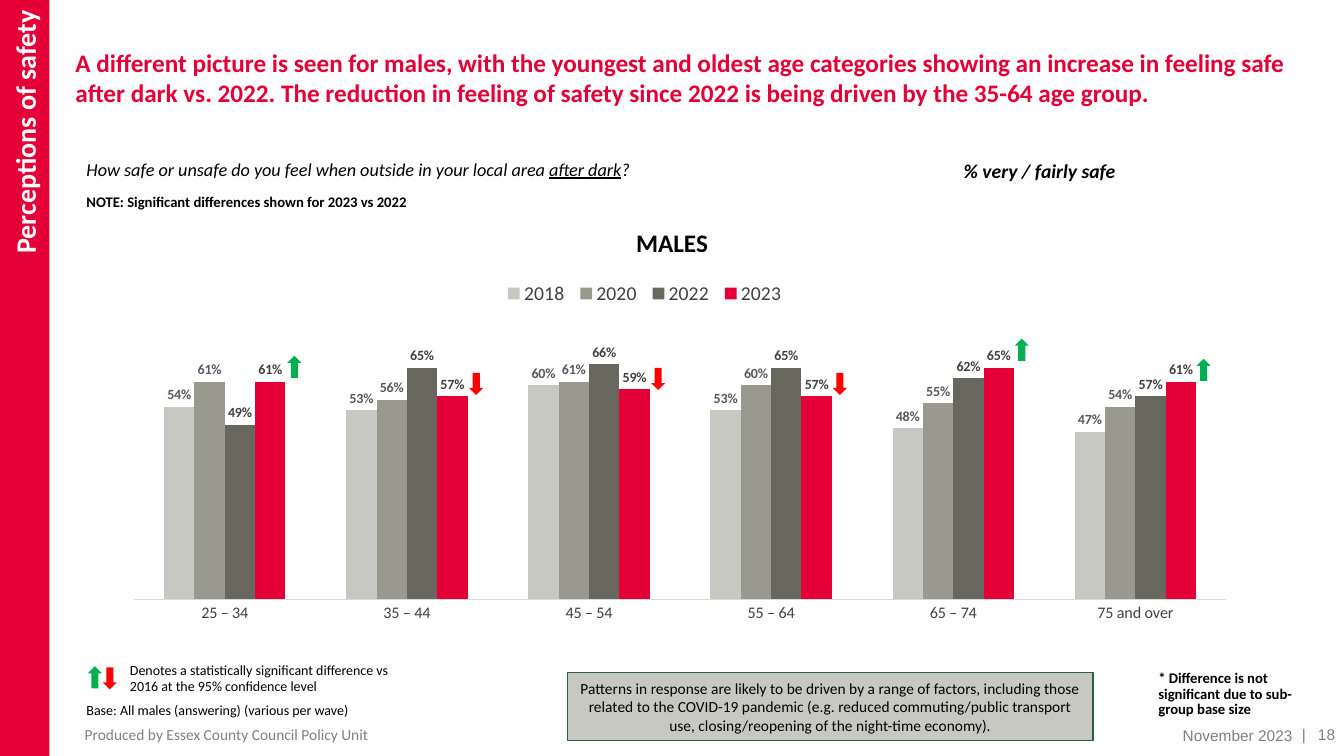
from lxml import etree
from pptx import Presentation
from pptx.chart.data import CategoryChartData
from pptx.dml.color import RGBColor
from pptx.enum.chart import XL_CHART_TYPE, XL_LABEL_POSITION, XL_LEGEND_POSITION, XL_TICK_MARK
from pptx.enum.shapes import MSO_SHAPE
from pptx.enum.text import MSO_ANCHOR, PP_ALIGN
from pptx.oxml.ns import qn
from pptx.util import Inches, Pt

CLUSTERED = XL_CHART_TYPE.COLUMN_CLUSTERED
OUTSIDE_END = XL_LABEL_POSITION.OUTSIDE_END
LEGEND_BOTTOM = XL_LEGEND_POSITION.BOTTOM
NO_TICKS = XL_TICK_MARK.NONE
RECTANGLE, UP, DOWN = MSO_SHAPE.RECTANGLE, MSO_SHAPE.UP_ARROW, MSO_SHAPE.DOWN_ARROW
TOP, MIDDLE = MSO_ANCHOR.TOP, MSO_ANCHOR.MIDDLE
LEFT, CENTER, RIGHT = PP_ALIGN.LEFT, PP_ALIGN.CENTER, PP_ALIGN.RIGHT

SLIDE_WIDTH, SLIDE_HEIGHT = Inches(13.33), Inches(7.5)
COLORS = {
    "red": "E40037", "black": "000000", "white": "FFFFFF", "footer": "808080",
    "callout": "C8C8C3", "callout_line": "2B5C4A", "rise": "00B050", "fall": "FF0000",
    "label_light": "595959", "label_dark": "404040", "axis": "D9D9D9",
    "2018": "C8C8C3", "2020": "99998F", "2022": "67675E", "2023": "E40037",
}
AGE_GROUPS = ["25 – 34", "35 – 44", "45 – 54", "55 – 64", "65 – 74", "75 and over"]
SAFE_SHARES = {
    "2018": (0.54, 0.53, 0.60, 0.53, 0.48, 0.47),
    "2020": (0.61, 0.56, 0.61, 0.60, 0.55, 0.54),
    "2022": (0.49, 0.65, 0.66, 0.65, 0.62, 0.57),
    "2023": (0.61, 0.57, 0.59, 0.57, 0.65, 0.61),
}
LABEL_COLORS = {"2018": "label_light", "2020": "label_light",
                "2022": "label_dark", "2023": "label_dark"}
# Direction and top of the significance arrow of each age group
CHANGES = [(UP, 47.07), (DOWN, 49.33), (DOWN, 48.67), (DOWN, 49.33), (UP, 44.8), (UP, 47.47)]
FIRST_CHANGE_LEFT, AGE_GROUP_STEP = 21.38, 13.53
ARROW_SIZE = (1.05, 2.93)


def rgb(name):
    return RGBColor.from_string(COLORS[name])


def place(left, top, width, height):
    """Turn percentages of the slide's size into lengths."""
    return (int(SLIDE_WIDTH * left / 100), int(SLIDE_HEIGHT * top / 100),
            int(SLIDE_WIDTH * width / 100), int(SLIDE_HEIGHT * height / 100))


def style_font(font, size, color, **formats):
    for attribute, value in {"name": "Calibri", "size": Pt(size), **formats}.items():
        setattr(font, attribute, value)
    font.color.rgb = rgb(color)


def write(frame, runs, size, color="black", align=LEFT, anchor=TOP, insets=None,
          spacing=None, **formats):
    """Fill a text frame with one paragraph; runs are (text, extra formats) pairs."""
    frame.word_wrap = True
    frame.vertical_anchor = anchor
    for side, inset in (insets or {}).items():
        setattr(frame, f"margin_{side}", Inches(inset))
    paragraph = frame.paragraphs[0]
    paragraph.alignment = align
    for attribute, value in (spacing or {}).items():
        setattr(paragraph, attribute, Pt(value))
    for text, extra in [(runs, {})] if isinstance(runs, str) else runs:
        run = paragraph.add_run()
        run.text = text
        style_font(run.font, size, color, **formats, **extra)


def add_text(slide, area, runs, size, **options):
    write(slide.shapes.add_textbox(*place(*area)).text_frame, runs, size, **options)


def add_block(slide, preset, area, fill, line=None):
    block = slide.shapes.add_shape(preset, *place(*area))
    block.shadow.inherit = False
    block.fill.solid()
    block.fill.fore_color.rgb = rgb(fill)
    if line:
        block.line.color.rgb = rgb(line)
        block.line.width = Pt(1)
    else:
        block.line.fill.background()
    return block


def add_change_arrow(slide, direction, left, top):
    add_block(slide, direction, (left, top, *ARROW_SIZE), "rise" if direction == UP else "fall")


def manual_layout(x, y, w, h, inner=False):
    layout = etree.Element(qn("c:layout"))
    manual = etree.SubElement(layout, qn("c:manualLayout"))
    settings = [("layoutTarget", "inner")] if inner else []
    settings += [("xMode", "edge"), ("yMode", "edge"), ("x", x), ("y", y), ("w", w), ("h", h)]
    for tag, value in settings:
        etree.SubElement(manual, qn(f"c:{tag}")).set("val", str(value))
    return layout


def style_series(series):
    series.format.fill.solid()
    series.format.fill.fore_color.rgb = rgb(series.name)
    labels = series.data_labels
    for attribute, value in {"show_value": True, "number_format": "0%",
                             "number_format_is_linked": False,
                             "position": OUTSIDE_END}.items():
        setattr(labels, attribute, value)
    style_font(labels.font, 10, LABEL_COLORS[series.name], bold=True)


def style_axes(chart):
    ages, shares = chart.category_axis, chart.value_axis
    ages.major_tick_mark = NO_TICKS
    ages.format.line.color.rgb = rgb("axis")
    ages.format.line.width = Pt(0.75)
    style_font(ages.tick_labels.font, 11.5, "label_dark")
    for attribute, value in {"minimum_scale": 0, "maximum_scale": 1, "visible": False,
                             "has_major_gridlines": False}.items():
        setattr(shares, attribute, value)


def add_safety_chart(slide, area):
    data = CategoryChartData(number_format="0%")
    data.categories = AGE_GROUPS
    for year, shares in SAFE_SHARES.items():
        data.add_series(year, shares)
    chart = slide.shapes.add_chart(CLUSTERED, *place(*area), data).chart
    chart.has_title = False
    style_font(chart.font, 10, "black")
    style_axes(chart)
    plot = chart.plots[0]
    for attribute, value in {"gap_width": 200, "overlap": 0, "vary_by_categories": False}.items():
        setattr(plot, attribute, value)
    for series in plot.series:
        style_series(series)

    chart.has_legend = True
    legend = chart.legend
    legend.position = LEGEND_BOTTOM
    legend.include_in_layout = False
    style_font(legend.font, 14, "label_dark")
    legend_xml = chart.element.find(f".//{qn('c:legend')}")
    plot_xml = chart.element.find(f".//{qn('c:plotArea')}")
    for parent in (legend_xml, plot_xml):
        for automatic in parent.findall(qn("c:layout")):
            parent.remove(automatic)
    legend_xml.find(qn("c:overlay")).addprevious(manual_layout(0.33, 0.07, 0.26, 0.08))
    plot_xml.insert(0, manual_layout(0.005, 0, 0.973, 0.776, inner=True))


def add_sidebar(slide):
    frame = add_block(slide, RECTANGLE, (0, 0, 3.68, 100), "red").text_frame
    write(frame, "Perceptions of safety", 20, color="white", align=RIGHT, anchor=MIDDLE,
          insets={"top": 0.1}, bold=True)
    frame._txBody.bodyPr.set("vert", "vert270")


def add_headings(slide):
    add_text(slide, (4.88, 5.6, 92.35, 15.47),
             "A different picture is seen for males, with the youngest and oldest age categories "
             "showing an increase in feeling safe after dark vs. 2022. The reduction in feeling of "
             "safety since 2022 is being driven by the 35-64 age group.",
             18, color="red", insets={"bottom": 0}, bold=True)
    add_text(slide, (5.7, 20.27, 64.74, 4.27),
             [("How safe or unsafe do you feel when outside in your local area ", {}),
              ("after dark", {"underline": True}), ("?", {})], 13, italic=True)
    add_text(slide, (70.97, 20.4, 19.05, 4.53), "% very / fairly safe", 14,
             spacing={"space_before": 6}, bold=True, italic=True)
    add_text(slide, (5.7, 24.8, 80.5, 3.73),
             "NOTE: Significant differences shown for 2023 vs 2022", 10.5, bold=True)
    add_text(slide, (44.41, 29.47, 11.18, 5.33), "MALES", 18, align=CENTER, bold=True)


def add_notes_below_chart(slide):
    add_change_arrow(slide, UP, 6.53, 88.13)
    add_change_arrow(slide, DOWN, 7.65, 88.27)
    add_text(slide, (8.93, 86.8, 22.81, 5.87),
             "Denotes a statistically significant difference vs 2016 at the 95% confidence level", 10)
    add_text(slide, (5.7, 92.13, 53.34, 3.6), "Base: All males (answering) (various per wave)", 10)
    callout = add_block(slide, RECTANGLE, (42.24, 88.93, 39.08, 9.07), "callout", "callout_line")
    write(callout.text_frame,
          "Patterns in response are likely to be driven by a range of factors, including those "
          "related to the COVID-19 pandemic (e.g. reduced commuting/public transport use, "
          "closing/reopening of the night-time economy).", 11, align=CENTER, anchor=MIDDLE)
    add_text(slide, (85.45, 88.8, 12.23, 6.13),
             "* Difference is not significant due to sub-group base size", 10.5,
             insets={"top": 0, "bottom": 0}, spacing={"line_spacing": 11}, bold=True)


def add_footer(slide):
    footer = {"size": 11, "color": "footer", "anchor": MIDDLE}
    add_text(slide, (4.88, 96.13, 49.06, 2), "Produced by Essex County Council Policy Unit",
             insets={"left": 0.19}, **footer)
    for area, text in [((78.92, 96.27, 18, 2), "November 2023"),
                       ((93.7, 96.13, 4.2, 2), "|"),
                       ((93.7, 96.13, 6.38, 2), "18")]:
        add_text(slide, area, text, align=RIGHT, name="Arial", **footer)


def main():
    deck = Presentation()
    deck.slide_width, deck.slide_height = SLIDE_WIDTH, SLIDE_HEIGHT
    slide = deck.slides.add_slide(deck.slide_layouts[6])
    add_sidebar(slide)
    add_safety_chart(slide, (9.53, 32.13, 83.57, 60.8))
    add_headings(slide)
    for group, (direction, top) in enumerate(CHANGES):
        add_change_arrow(slide, direction, FIRST_CHANGE_LEFT + group * AGE_GROUP_STEP, top)
    add_notes_below_chart(slide)
    add_footer(slide)
    deck.save("out.pptx")


if __name__ == "__main__":
    main()
